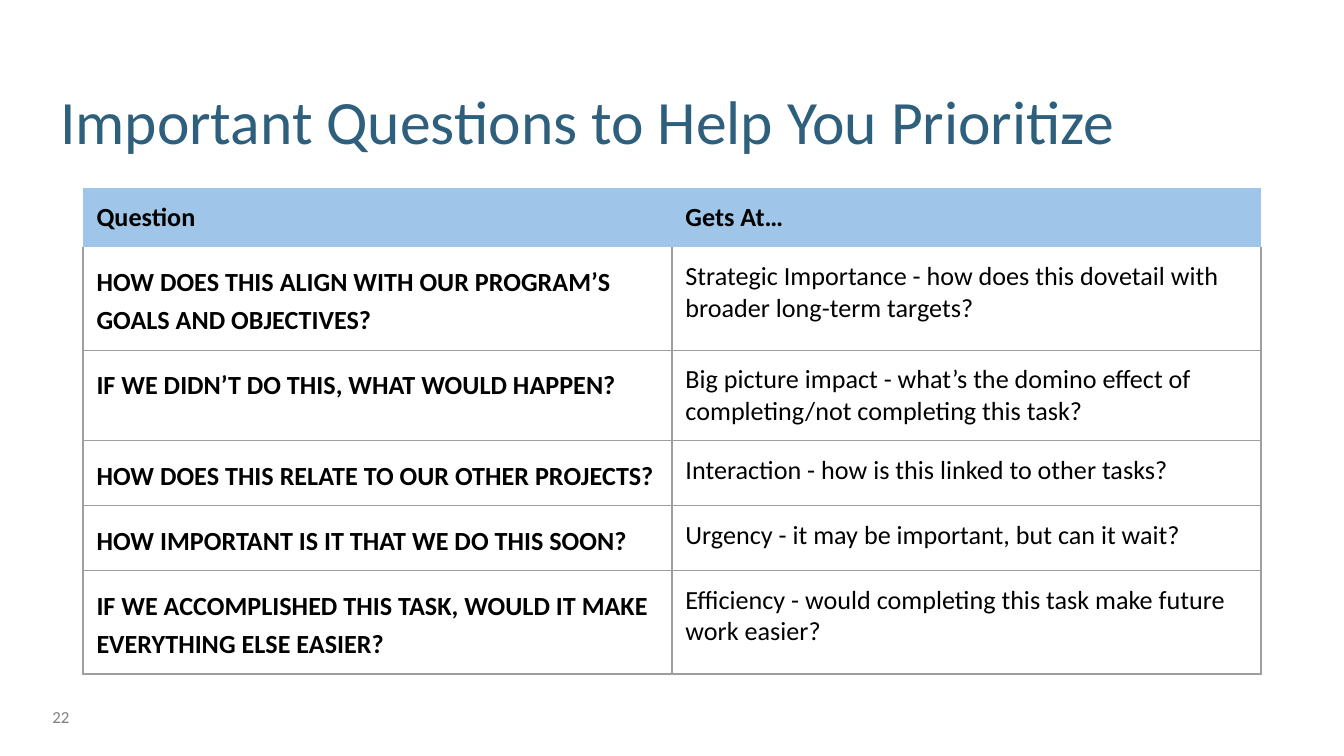
from lxml import etree
from pptx import Presentation
from pptx.dml.color import RGBColor
from pptx.enum.text import MSO_ANCHOR, MSO_AUTO_SIZE, PP_ALIGN
from pptx.oxml.ns import qn
from pptx.util import Pt

LEFT = PP_ALIGN.LEFT
TOP, MIDDLE = MSO_ANCHOR.TOP, MSO_ANCHOR.MIDDLE
FIXED = MSO_AUTO_SIZE.NONE
NAVY = RGBColor(0x2E, 0x5F, 0x7D)
SKY = RGBColor(0x9F, 0xC5, 0xE8)
BLACK = RGBColor(0, 0, 0)
GRAY = RGBColor(0x7F, 0x7F, 0x7F)
RULE = RGBColor(0x9E, 0x9E, 0x9E)

HEAD = ("Question", "Gets At…")
ROWS = [
    ("HOW DOES THIS ALIGN WITH OUR PROGRAM’S GOALS AND OBJECTIVES?",
     "Strategic Importance - how does this dovetail with broader long-term targets?", 55.2),
    ("IF WE DIDN’T DO THIS, WHAT WOULD HAPPEN?",
     "Big picture impact - what’s the domino effect of completing/not completing this task?", 48.3),
    ("HOW DOES THIS RELATE TO OUR OTHER PROJECTS?",
     "Interaction - how is this linked to other tasks?", 34.8),
    ("HOW IMPORTANT IS IT THAT WE DO THIS SOON?",
     "Urgency - it may be important, but can it wait?", 34.8),
    ("IF WE ACCOMPLISHED THIS TASK, WOULD IT MAKE EVERYTHING ELSE EASIER?",
     "Efficiency - would completing this task make future work easier?", 55.2),
]


class Deck:
    font = "Calibri"

    def __init__(self, slide):
        self.slide = slide

    def text(self, para, words, size, color, bold=False):
        para.alignment = LEFT
        run = para.add_run()
        run.text = words
        font = run.font
        font.name, font.size, font.bold = self.font, Pt(size), bold
        font.color.rgb = color

    def frame(self, shape, side):
        frame = shape.text_frame
        frame.word_wrap = True
        frame.auto_size = FIXED
        frame.vertical_anchor = MIDDLE
        frame.margin_left = frame.margin_right = Pt(side)
        frame.margin_top = frame.margin_bottom = Pt(2.7)
        return frame.paragraphs[0]

    def title(self, words, left, top, width, height):
        shape = self.slide.shapes.title
        shape.left, shape.top = Pt(left), Pt(top)
        shape.width, shape.height = Pt(width), Pt(height)
        self.text(self.frame(shape, 5.4), words, 33, NAVY)

    def label(self, words, left, top, width, height):
        box = self.slide.shapes.add_textbox(Pt(left), Pt(top), Pt(width), Pt(height))
        self.text(self.frame(box, 0), words, 9, GRAY)

    def border(self, cell, sides, color=None):
        props = cell._tc.get_or_add_tcPr()
        for side in sides:
            line = etree.SubElement(props, qn("a:ln" + side), w=str(Pt(0.75)))
            if color is None:
                etree.SubElement(line, qn("a:noFill"))
            else:
                fill = etree.SubElement(line, qn("a:solidFill"))
                etree.SubElement(fill, qn("a:srgbClr"), val=str(color))

    def cell(self, cell, words, row, ask):
        head = row == 0
        cell.margin_left = cell.margin_right = Pt(7.2)
        cell.margin_top = cell.margin_bottom = Pt(7.2)
        cell.vertical_anchor = TOP
        para = cell.text_frame.paragraphs[0]
        if head:
            self.border(cell, "LRTB")
            cell.fill.solid()
            cell.fill.fore_color.rgb = SKY
        else:
            self.border(cell, "LR", RULE)
            self.border(cell, "T", RULE if row > 1 else None)
            self.border(cell, "B", RULE)
            cell.fill.background()
            if ask:
                para.line_spacing = 1.2
                para.space_after = Pt(19)
        self.text(para, words, 14, BLACK, head or ask)

    def table(self, head, rows, left, top, width):
        lines = [(*head, 31.5), *rows]
        high = sum(line[-1] for line in lines)
        shape = self.slide.shapes.add_table(
            len(lines), len(head), Pt(left), Pt(top), Pt(width), Pt(high))
        table = shape.table
        table.first_row = table.horz_banding = False
        for col in table.columns:
            col.width = Pt(width / len(head))
        for i, (*texts, tall) in enumerate(lines):
            table.rows[i].height = Pt(tall)
            for j, words in enumerate(texts):
                self.cell(table.cell(i, j), words, i, j == 0)


def main():
    prs = Presentation()
    prs.slide_width, prs.slide_height = Pt(720), Pt(405)
    deck = Deck(prs.slides.add_slide(prs.slide_layouts[5]))
    deck.label("22", 28, 376, 32, 16.5)
    deck.title("Important Questions to Help You Prioritize", 26.8, 32.3, 666.6, 63.4)
    deck.table(HEAD, ROWS, 44.5, 100.8, 631)
    prs.save("out.pptx")


if __name__ == "__main__":
    main()
